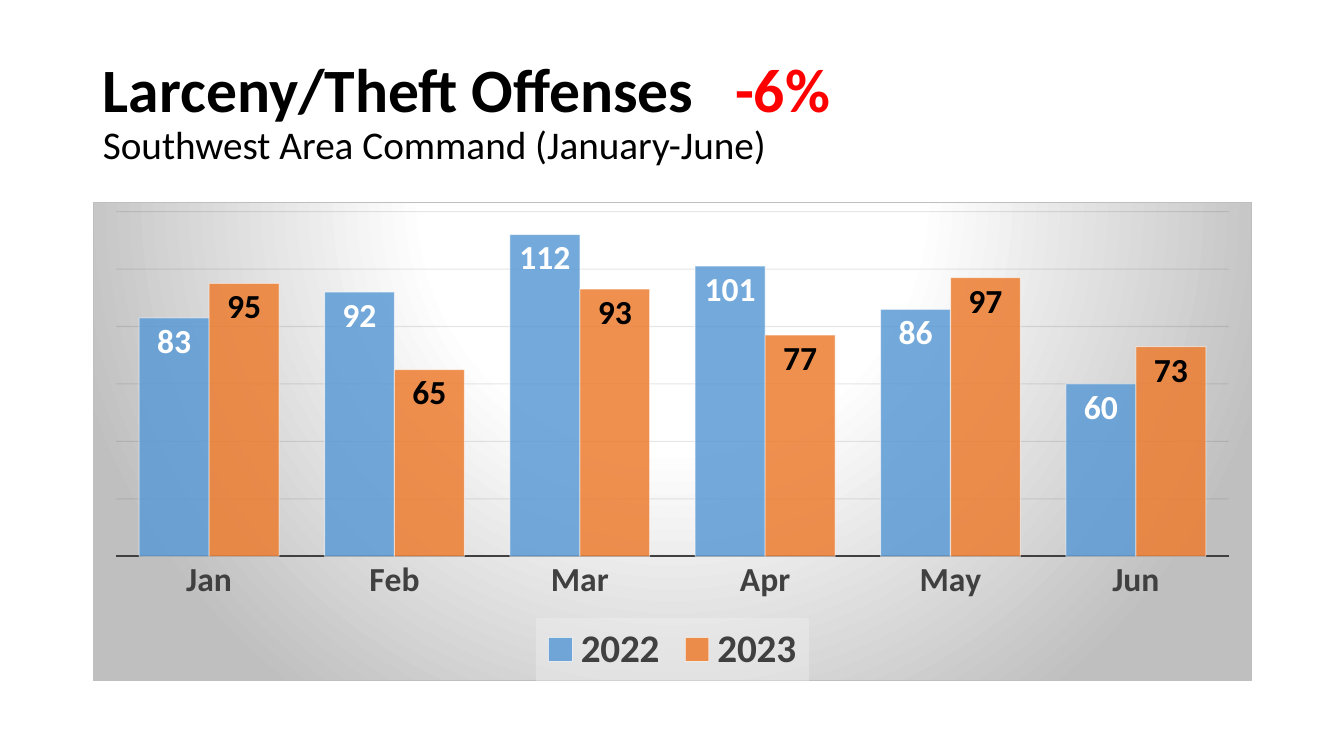
from dataclasses import dataclass

from lxml import etree
from pptx import Presentation
from pptx.chart.chart import Chart
from pptx.chart.data import CategoryChartData as Data
from pptx.dml.color import RGBColor as RGB
from pptx.enum.chart import XL_CHART_TYPE as Kind
from pptx.enum.chart import XL_LABEL_POSITION as Spot
from pptx.enum.chart import XL_LEGEND_POSITION as Side
from pptx.enum.chart import XL_TICK_LABEL_POSITION as Label
from pptx.enum.chart import XL_TICK_MARK as Tick
from pptx.enum.text import MSO_ANCHOR as Anchor
from pptx.enum.text import MSO_AUTO_SIZE as Fit
from pptx.enum.text import PP_ALIGN as Align
from pptx.oxml import parse_xml
from pptx.oxml.ns import nsdecls, qn
from pptx.slide import Slide
from pptx.text.text import Font
from pptx.util import Inches, Length, Pt


@dataclass(frozen=True)
class Theme:
    face: str = "Calibri"
    black: str = "000000"
    white: str = "FFFFFF"
    red: str = "FF0000"
    dark: str = "404040"
    edge: str = "BFBFBF"
    grid: str = "0D0D0D"
    panel: str = "F2F2F2"
    head: int = 44
    sub: int = 28
    label: int = 24
    base: int = 10


@dataclass(frozen=True)
class Series:
    name: str
    values: tuple[int, ...]
    fill: str
    ink: str


@dataclass(frozen=True)
class Box:
    left: Length
    top: Length
    width: Length
    height: Length


THEME = Theme()
MONTHS = ("Jan", "Feb", "Mar", "Apr", "May", "Jun")
YEARS = (
    Series("2022", (83, 92, 112, 101, 86, 60), "5B9BD5", THEME.white),
    Series("2023", (95, 65, 93, 77, 97, 73), "ED7D31", THEME.black),
)
TITLE = Box(Inches(0.92), Inches(0.4), Inches(11.5), Inches(1.45))
CHART = Box(Inches(0.92), Inches(2), Inches(11.5), Inches(4.76))
RATE = Inches(6.27)  # tab stop of the change figure


def style(font: Font, size: int, color: str, bold: bool = False) -> None:
    font.name, font.size, font.bold = THEME.face, Pt(size), bold
    font.color.rgb = RGB.from_string(color)


def paint(part, color: str, alpha: int = 100) -> None:
    """Give a fill format a solid colour with the given opacity."""
    part.solid()
    part.fore_color.rgb = RGB.from_string(color)
    if alpha < 100:
        node = part._xPr.find(f"{qn('a:solidFill')}/{qn('a:srgbClr')}")
        etree.SubElement(node, qn("a:alpha"), val=str(alpha * 1000))


def add_title(slide: Slide) -> None:
    shape = slide.shapes.title
    shape.left, shape.top = TITLE.left, TITLE.top
    shape.width, shape.height = TITLE.width, TITLE.height
    frame = shape.text_frame
    frame.word_wrap, frame.auto_size = True, Fit.NONE
    frame.vertical_anchor = Anchor.MIDDLE
    frame.text = "Larceny/Theft Offenses\t"
    para = frame.paragraphs[0]
    para.alignment, para.line_spacing = Align.LEFT, 0.9
    rate = para.add_run()
    rate.text = "-6%"
    para.add_line_break()
    area = para.add_run()
    area.text = "Southwest Area Command (January-June)"
    style(para.runs[0].font, THEME.head, THEME.black, True)
    style(rate.font, THEME.head, THEME.red, True)
    style(area.font, THEME.sub, THEME.black)
    tabs = etree.SubElement(para._p.get_or_add_pPr(), qn("a:tabLst"))
    etree.SubElement(tabs, qn("a:tab"), pos=str(int(RATE)), algn="l")


def add_back(chart: Chart) -> None:
    """Fill the chart area with a round gradient and a thin border."""
    stops = ((0, THEME.white), (39, THEME.white), (100, THEME.edge))
    marks = "".join(
        f'<a:gs pos="{pos * 1000}"><a:srgbClr val="{color}"/></a:gs>'
        for pos, color in stops
    )
    back = parse_xml(
        f'<c:spPr {nsdecls("c", "a")}><a:gradFill><a:gsLst>{marks}</a:gsLst>'
        '<a:path path="circle"><a:fillToRect l="50000" t="-80000" '
        'r="50000" b="180000"/></a:path></a:gradFill>'
        f'<a:ln w="{Pt(0.75)}"><a:solidFill><a:srgbClr val="{THEME.edge}"/>'
        "</a:solidFill></a:ln></c:spPr>"
    )
    chart.element.find(qn("c:chart")).addnext(back)


def add_legend(chart: Chart) -> None:
    chart.has_legend = True
    legend = chart.legend
    legend.position, legend.include_in_layout = Side.BOTTOM, False
    style(legend.font, THEME.sub, THEME.dark, True)
    panel = parse_xml(
        f'<c:spPr {nsdecls("c", "a")}><a:solidFill>'
        f'<a:srgbClr val="{THEME.panel}"><a:alpha val="39000"/></a:srgbClr>'
        "</a:solidFill><a:ln><a:noFill/></a:ln></c:spPr>"
    )
    chart.element.find(f".//{qn('c:legend')}/{qn('c:txPr')}").addprevious(panel)


def set_axes(chart: Chart) -> None:
    months, count = chart.category_axis, chart.value_axis
    months.major_tick_mark = months.minor_tick_mark = Tick.NONE
    months.tick_label_position = Label.NEXT_TO_AXIS
    style(months.tick_labels.font, THEME.label, THEME.dark, True)
    months.format.line.width = Pt(1.5)
    paint(months.format.line.fill, THEME.dark)
    count.minimum_scale, count.maximum_scale, count.major_unit = 0, 120, 20
    count.visible = False
    count.has_major_gridlines = True
    line = count.major_gridlines.format.line
    line.width = Pt(0.75)
    paint(line.fill, THEME.grid, 10)


def add_bars(slide: Slide) -> None:
    data = Data()
    data.categories = MONTHS
    for year in YEARS:
        data.add_series(year.name, year.values)
    chart = slide.shapes.add_chart(
        Kind.COLUMN_CLUSTERED, CHART.left, CHART.top, CHART.width, CHART.height, data
    ).chart
    chart.has_title = False
    style(chart.font, THEME.base, THEME.black)
    add_back(chart)
    set_axes(chart)
    add_legend(chart)

    # Columns and their value labels
    plot = chart.plots[0]
    plot.gap_width, plot.overlap, plot.vary_by_categories = 65, 0, False
    for bars, year in zip(plot.series, YEARS):
        paint(bars.format.fill, year.fill, 85)
        bars.format.line.width = Pt(0.75)
        paint(bars.format.line.fill, THEME.white, 50)
        labels = bars.data_labels
        labels.show_value, labels.position = True, Spot.INSIDE_END
        style(labels.font, THEME.label, year.ink, True)


def main() -> None:
    deck = Presentation()
    deck.slide_width, deck.slide_height = Inches(13.33), Inches(7.5)
    slide = deck.slides.add_slide(deck.slide_layouts[5])
    add_title(slide)
    add_bars(slide)
    deck.save("out.pptx")


if __name__ == "__main__":
    main()
